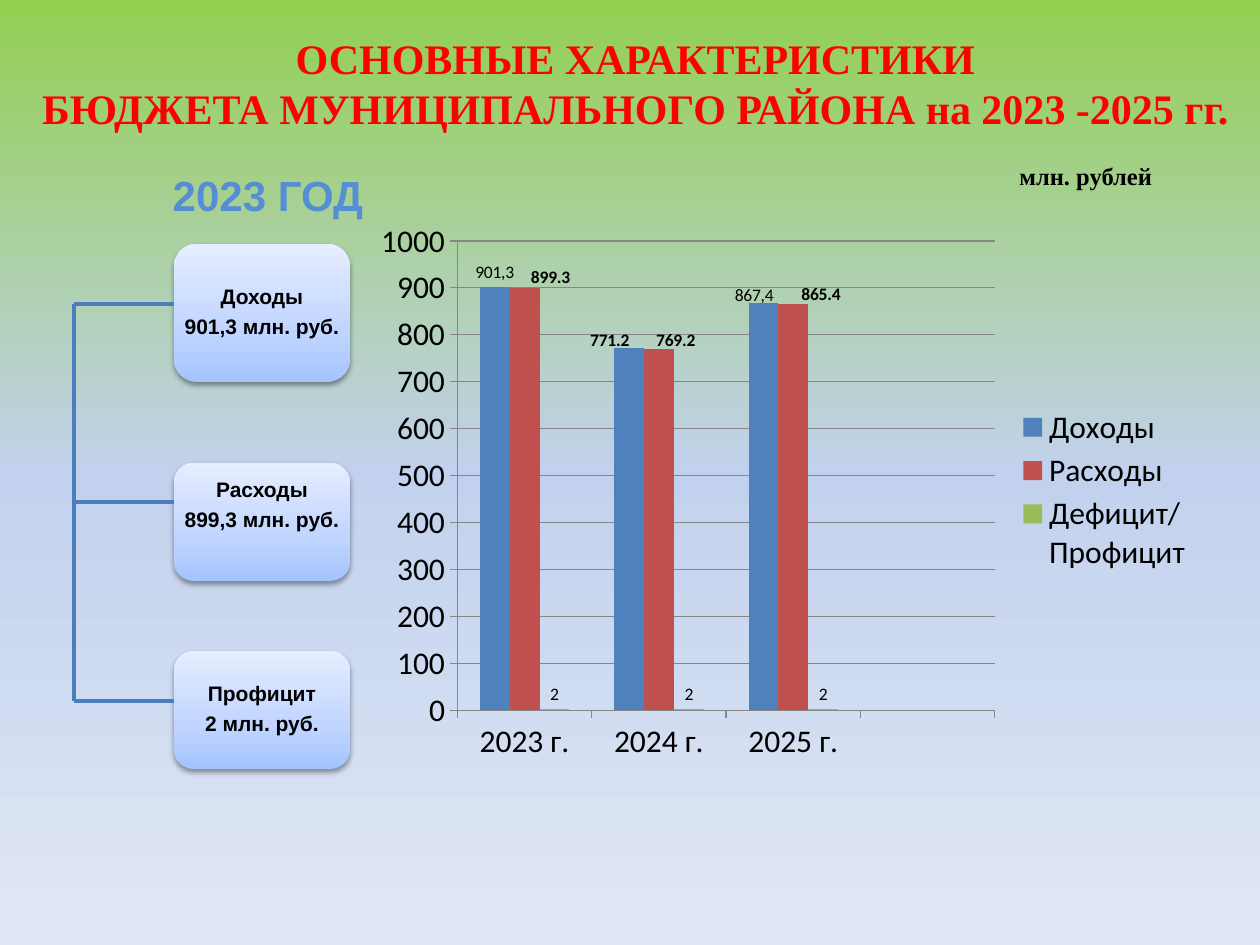
from lxml import etree
from pptx import Presentation
from pptx.chart.data import CategoryChartData
from pptx.dml.color import RGBColor
from pptx.enum.chart import XL_CHART_TYPE, XL_LABEL_POSITION, XL_LEGEND_POSITION, XL_TICK_MARK
from pptx.enum.shapes import MSO_CONNECTOR, MSO_SHAPE
from pptx.enum.text import MSO_ANCHOR, MSO_AUTO_SIZE, PP_ALIGN
from pptx.oxml import parse_xml
from pptx.oxml.ns import nsdecls, qn
from pptx.util import Emu, Pt

COLUMN = XL_CHART_TYPE.COLUMN_CLUSTERED
OUTSIDE = XL_LABEL_POSITION.OUTSIDE_END
RIGHT = XL_LEGEND_POSITION.RIGHT
TICK = XL_TICK_MARK.OUTSIDE
LINE = MSO_CONNECTOR.STRAIGHT
ROUND = MSO_SHAPE.ROUNDED_RECTANGLE
TOP, MIDDLE = MSO_ANCHOR.TOP, MSO_ANCHOR.MIDDLE
LEFT, CENTER = PP_ALIGN.LEFT, PP_ALIGN.CENTER

SCALE = 914400 // 126
COLORS = {
    "title": "FF0000", "text": "000000", "year": "558ED5",
    "line": "4B7EBC", "grid": "868686",
}
SKY = [(0, "92D050"), (50, "C2D1ED"), (100, "E1E8F5")]
CARD = [(0, "A4C4FF"), (35, "BFD4FF"), (100, "E6EEFF")]

# top, height, middle of the branch, extra bottom inset, lines
CARDS = [
    (244, 138, 304, 0, ["Доходы", "901,3 млн. руб."]),
    (463, 118, 502, 32, ["Расходы", "899,3 млн. руб."]),
    (651, 118, 701, 0, ["Профицит", "2 млн. руб."]),
]
CARD_X, CARD_W, SPINE_X = 174, 176, 74

CHART_BOX = (365, 213, 840, 559)
YEARS = ["2023 г.", "2024 г.", "2025 г.", ""]
# name, values, colour, bold labels, label shifts in px, own label wording
SERIES = [
    ("Доходы", [901.3, 771.2, 867.4, None], "4F81BD", True,
     [(0, 0), (-19, 7), (-9, 7)], {0: "901,3", 2: "867,4"}),
    ("Расходы", [899.3, 769.2, 865.4, None], "C0504D", True,
     [(26, 4), (17, 6), (28, 5)], {}),
    ("Дефицит/Профицит", [2, 2, 2, None], "9BBB59", False, [], {}),
]


def px(*nums):
    return [Emu(n * SCALE) for n in nums]


def rgb(name):
    return RGBColor.from_string(COLORS.get(name, name))


def style(font, size, color="text", face="Arial", bold=True):
    font.size, font.name, font.bold = Pt(size), face, bold
    font.color.rgb = rgb(color)


def write(frame, lines, size, color, face, align):
    frame.text = "\n".join(lines)
    for para in frame.paragraphs:
        para.alignment = align
        style(para.font, size, color, face)


def blend(fill, node, stops, angle):
    """Give a fill any number of gradient stops; node is the fill's owner."""
    fill.gradient()
    fill.gradient_angle = angle
    group = node.xpath(".//a:gsLst")[0]
    for old in list(group):
        group.remove(old)
    for pos, color in stops:
        stop = etree.SubElement(group, qn("a:gs"), pos=str(pos * 1000))
        etree.SubElement(stop, qn("a:srgbClr"), val=color)


def add_title(slide, box, lines):
    title = slide.shapes.title
    title.left, title.top, title.width, title.height = px(*box)
    frame = title.text_frame
    write(frame, lines, 24, "title", "Times New Roman", CENTER)
    frame.auto_size = MSO_AUTO_SIZE.NONE
    frame.vertical_anchor = TOP


def add_label(slide, box, text, size, color, face, align):
    frame = slide.shapes.add_textbox(*px(*box)).text_frame
    frame.word_wrap = True
    write(frame, [text], size, color, face, align)


def add_card(slide, top, height, extra, lines):
    card = slide.shapes.add_shape(ROUND, *px(CARD_X, top, CARD_W, height))
    blend(card.fill, card._element, CARD, 90)
    card.line.fill.background()
    card.shadow.inherit = False
    card._element.spPr.find(qn("a:effectLst")).append(parse_xml(
        f'<a:outerShdw {nsdecls("a")} blurRad="40000" dist="20000" dir="5400000" '
        'rotWithShape="0"><a:srgbClr val="000000"><a:alpha val="38000"/>'
        '</a:srgbClr></a:outerShdw>'))
    frame = card.text_frame
    frame.word_wrap = True
    frame.vertical_anchor = MIDDLE
    frame.margin_left, frame.margin_right, frame.margin_top, frame.margin_bottom = px(
        1, 1, 1, 1 + extra)
    write(frame, lines, 12, "text", "Arial", CENTER)
    for para in frame.paragraphs:
        para.line_spacing = 0.9
        para.space_after = Pt(4.2)


def add_line(slide, *ends):
    line = slide.shapes.add_connector(LINE, *px(*ends))
    line.line.color.rgb = rgb("line")
    line.line.width = Pt(2.25)
    etree.SubElement(line._element.spPr, qn("a:effectLst"))


def add_tree(slide):
    for top, height, _, extra, lines in CARDS:
        add_card(slide, top, height, extra, lines)
    mids = [card[2] for card in CARDS]
    for mid in mids:
        add_line(slide, SPINE_X, mid, CARD_X, mid)
    for start, end in zip(mids, mids[1:]):
        add_line(slide, SPINE_X, start, SPINE_X, end)


def place(node, index, **parts):
    """Insert a manual layout, in shares of the chart, as child number index."""
    for old in node.xpath("c:layout"):
        node.remove(old)
    layout = etree.Element(qn("c:layout"))
    manual = etree.SubElement(layout, qn("c:manualLayout"))
    for tag, val in parts.items():
        etree.SubElement(manual, qn("c:" + tag), val=str(val))
    node.insert(index, layout)


def label_bars(series, bold, shifts, words):
    labels = series.data_labels
    labels.show_value = True
    labels.position = OUTSIDE
    style(labels.font, 10, face="Calibri", bold=bold)
    for num, (right, down) in enumerate(shifts):
        label = series.points[num].data_label
        if num in words:
            label.text_frame.text = words[num]
            font = label.text_frame.paragraphs[0].runs[0].font
        else:
            font = label.font
        style(font, 10, face="Calibri", bold=num not in words)
        label.position = OUTSIDE
        if right or down:
            node = series._element.xpath(f'.//c:dLbl[c:idx/@val="{num}"]')[0]
            place(node, 1, x=round(right / CHART_BOX[2], 3), y=round(down / CHART_BOX[3], 3))


def add_bars(slide):
    data = CategoryChartData()
    data.categories = YEARS
    for name, vals, *_ in SERIES:
        data.add_series(name, vals)
    chart = slide.shapes.add_chart(COLUMN, *px(*CHART_BOX), data).chart
    style(chart.font, 18, face="Calibri", bold=False)
    chart.has_title = False
    plot = chart.plots[0]
    plot.gap_width, plot.overlap, plot.vary_by_categories = 150, 0, False
    for series, (_, _, color, *label) in zip(plot.series, SERIES):
        series.format.fill.solid()
        series.format.fill.fore_color.rgb = rgb(color)
        label_bars(series, *label)
    scale = chart.value_axis
    scale.minimum_scale, scale.maximum_scale, scale.major_unit = 0, 1000, 100
    scale.has_major_gridlines = True
    for axis in (scale, chart.category_axis):
        axis.major_tick_mark = TICK
        axis.format.line.color.rgb = rgb("grid")
    scale.major_gridlines.format.line.color.rgb = rgb("grid")
    chart.has_legend = True
    legend = chart.legend
    legend.position = RIGHT
    legend.include_in_layout = False
    place(legend._element, 1, xMode="edge", yMode="edge", x=0.77, y=0.34, w=0.22, h=0.31)
    area = chart._chartSpace.xpath(".//c:plotArea")[0]
    place(area, 0, layoutTarget="inner", xMode="edge", yMode="edge",
          x=0.11, y=0.05, w=0.64, h=0.84)


def main():
    deck = Presentation()
    deck.slide_width, deck.slide_height = px(1260, 945)
    slide = deck.slides.add_slide(deck.slide_layouts[5])
    blend(slide.background.fill, slide._element, SKY, 270)
    add_title(slide, (25, 26, 1221, 110), [
        "ОСНОВНЫЕ ХАРАКТЕРИСТИКИ",
        "БЮДЖЕТА МУНИЦИПАЛЬНОГО РАЙОНА на 2023 -2025 гг."])
    add_label(slide, (1007, 155, 198, 43), "млн. рублей", 14, "text", "Times New Roman", LEFT)
    add_tree(slide)
    add_label(slide, (134, 163, 268, 63), "2023 ГОД", 24, "year", "Arial", CENTER)
    add_bars(slide)
    deck.save("out.pptx")


if __name__ == "__main__":
    main()
